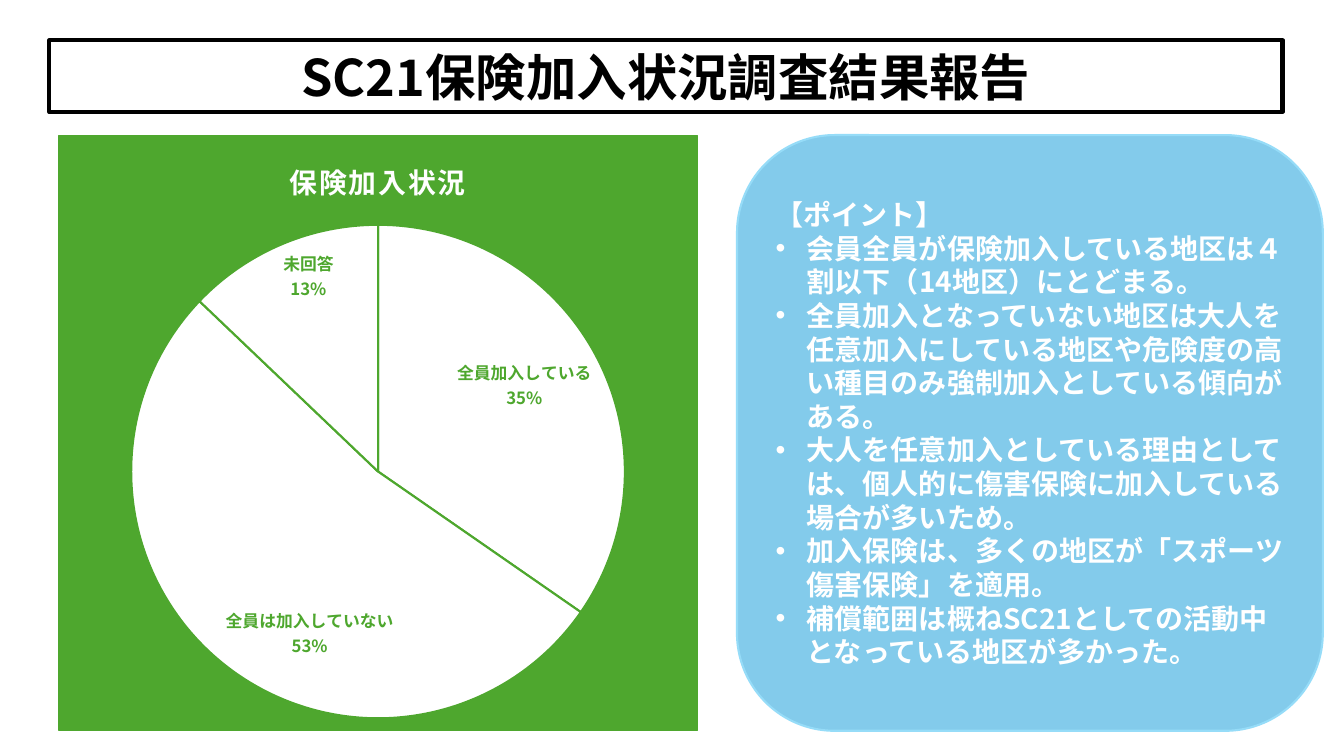
from lxml import etree
from pptx import Presentation
from pptx.chart.data import CategoryChartData
from pptx.dml.color import RGBColor
from pptx.enum.chart import XL_CHART_TYPE, XL_LABEL_POSITION
from pptx.enum.shapes import MSO_SHAPE
from pptx.enum.text import MSO_ANCHOR, MSO_AUTO_SIZE, PP_ALIGN
from pptx.oxml import parse_xml
from pptx.oxml.ns import nsdecls, qn
from pptx.util import Inches, Pt

TITLE = "SC21保険加入状況調査結果報告"
CHART_TITLE = "保険加入状況"
COVERAGE = {"全員加入している": 35, "全員は加入していない": 53, "未回答": 13}
POINTS_HEADING = "【ポイント】"
POINTS = [
    "会員全員が保険加入している地区は４割以下（14地区）にとどまる。",
    "全員加入となっていない地区は大人を任意加入にしている地区や危険度の高い種目のみ強制加入としている傾向がある。",
    "大人を任意加入としている理由としては、個人的に傷害保険に加入している場合が多いため。",
    "加入保険は、多くの地区が「スポーツ傷害保険」を適用。",
    "補償範囲は概ねSC21としての活動中となっている地区が多かった。",
]

FONT = "Noto Sans CJK JP"
BLACK = RGBColor(0x00, 0x00, 0x00)
WHITE = RGBColor(0xFF, 0xFF, 0xFF)
GREEN = RGBColor(0x4E, 0xA7, 0x2E)
SKY = RGBColor(0x83, 0xCB, 0xEB)
SKY_LINE = RGBColor(0x96, 0xDC, 0xF8)
PIE = XL_CHART_TYPE.PIE
INSIDE_END = XL_LABEL_POSITION.INSIDE_END
RECTANGLE = MSO_SHAPE.RECTANGLE
ROUNDED_RECTANGLE = MSO_SHAPE.ROUNDED_RECTANGLE
MIDDLE = MSO_ANCHOR.MIDDLE
GROW_SHAPE = MSO_AUTO_SIZE.SHAPE_TO_FIT_TEXT
LEFT = PP_ALIGN.LEFT
CENTER = PP_ALIGN.CENTER

TITLE_BOX = (0.49, 0.4, 12.23, 0.71)
CHART_BOX = (0.58, 1.34, 6.34, 5.91)
POINTS_BOX = (7.31, 1.34, 5.81, 5.91)
PLOT_LAYOUT = {"x": 0.11, "y": 0.15, "w": 0.78, "h": 0.83}
BULLET_INDENT = Inches(0.31)


def style_font(font, size, color, bold=True):
    font.name = FONT
    font.size = Pt(size)
    font.bold = bold
    font.color.rgb = color


def style_paragraph(paragraph, size, color):
    """Format every run, including its East Asian typeface."""
    for run in paragraph.runs:
        style_font(run.font, size, color)
        properties = run.font._element
        east_asian = etree.SubElement(properties, qn("a:ea"), typeface=FONT)
        properties.find(qn("a:latin")).addnext(east_asian)


def add_box(slide, kind, box, line_color, line_width, fill_color=None):
    shape = slide.shapes.add_shape(kind, *map(Inches, box))
    shape.shadow.inherit = False
    if fill_color is None:
        shape.fill.background()
    else:
        shape.fill.solid()
        shape.fill.fore_color.rgb = fill_color
    shape.line.color.rgb = line_color
    shape.line.width = Pt(line_width)
    shape.text_frame.word_wrap = True
    return shape


def add_bullet(paragraph):
    properties = paragraph._p.get_or_add_pPr()
    properties.set("marL", str(BULLET_INDENT))
    properties.set("indent", str(-BULLET_INDENT))
    etree.SubElement(properties, qn("a:buFont"), typeface="Arial")
    etree.SubElement(properties, qn("a:buChar"), char="•")


def add_title(slide):
    shape = add_box(slide, RECTANGLE, TITLE_BOX, BLACK, 3)
    frame = shape.text_frame
    frame.auto_size = GROW_SHAPE
    frame.text = TITLE
    frame.paragraphs[0].alignment = CENTER
    style_paragraph(frame.paragraphs[0], 36, BLACK)


def fill_chart_area(chart):
    chart._chartSpace.find(qn("c:chart")).addnext(parse_xml(
        f'<c:spPr {nsdecls("c", "a")}>'
        f'<a:solidFill><a:srgbClr val="{GREEN}"/></a:solidFill>'
        f'<a:ln w="{Pt(0.75)}"><a:solidFill><a:srgbClr val="{GREEN}"/></a:solidFill></a:ln>'
        '</c:spPr>'))


def place_plot(chart):
    plot_area = chart._chartSpace.find(qn("c:chart")).find(qn("c:plotArea"))
    for layout in plot_area.findall(qn("c:layout")):
        plot_area.remove(layout)
    modes = '<c:layoutTarget val="inner"/><c:xMode val="edge"/><c:yMode val="edge"/>'
    sizes = "".join(f'<c:{key} val="{value}"/>' for key, value in PLOT_LAYOUT.items())
    plot_area.insert(0, parse_xml(
        f'<c:layout {nsdecls("c")}><c:manualLayout>{modes}{sizes}</c:manualLayout></c:layout>'))


def label_slices(series):
    """Show the category above its rounded share."""
    labels = series.data_labels
    labels.show_value = True
    labels.show_percentage = False
    labels.show_category_name = True
    labels.number_format = '0"%"'
    labels.number_format_is_linked = False
    labels.position = INSIDE_END
    style_font(labels.font, 12, GREEN)
    separator = etree.Element(qn("c:separator"))
    separator.text = "\n"
    flags = labels._element
    last_flag = flags.find(qn("c:showBubbleSize"))
    if last_flag is None:
        last_flag = flags.find(qn("c:showPercent"))
    last_flag.addnext(separator)


def add_coverage_chart(slide):
    data = CategoryChartData()
    data.categories = list(COVERAGE)
    data.add_series(CHART_TITLE, list(COVERAGE.values()))
    chart = slide.shapes.add_chart(PIE, *map(Inches, CHART_BOX), data).chart
    style_font(chart.font, 10, BLACK, bold=False)
    chart.has_legend = False
    chart.has_title = True
    title = chart.chart_title
    title.include_in_layout = False
    title.text_frame.text = CHART_TITLE
    title_paragraph = title.text_frame.paragraphs[0]
    style_paragraph(title_paragraph, 19.9, WHITE)
    title_paragraph.runs[0].font._element.set("spc", "100")
    fill_chart_area(chart)
    place_plot(chart)

    plot = chart.plots[0]
    plot.vary_by_categories = False
    series = plot.series[0]
    for index in range(len(COVERAGE)):
        slice_format = series.points[index].format
        slice_format.fill.solid()
        slice_format.fill.fore_color.rgb = WHITE
        slice_format.line.color.rgb = GREEN
        slice_format.line.width = Pt(1.5)
    label_slices(series)


def add_points(slide):
    shape = add_box(slide, ROUNDED_RECTANGLE, POINTS_BOX, SKY_LINE, 1.5, SKY)
    frame = shape.text_frame
    frame.vertical_anchor = MIDDLE
    frame.text = "\n".join([POINTS_HEADING, *POINTS])
    for index, paragraph in enumerate(frame.paragraphs):
        paragraph.alignment = LEFT
        if index > 0:
            add_bullet(paragraph)
        style_paragraph(paragraph, 20, WHITE)


def main():
    presentation = Presentation()
    presentation.slide_width = Inches(13.33)
    presentation.slide_height = Inches(7.5)
    slide = presentation.slides.add_slide(presentation.slide_layouts[6])
    add_coverage_chart(slide)
    add_title(slide)
    add_points(slide)
    presentation.save("out.pptx")


if __name__ == "__main__":
    main()
